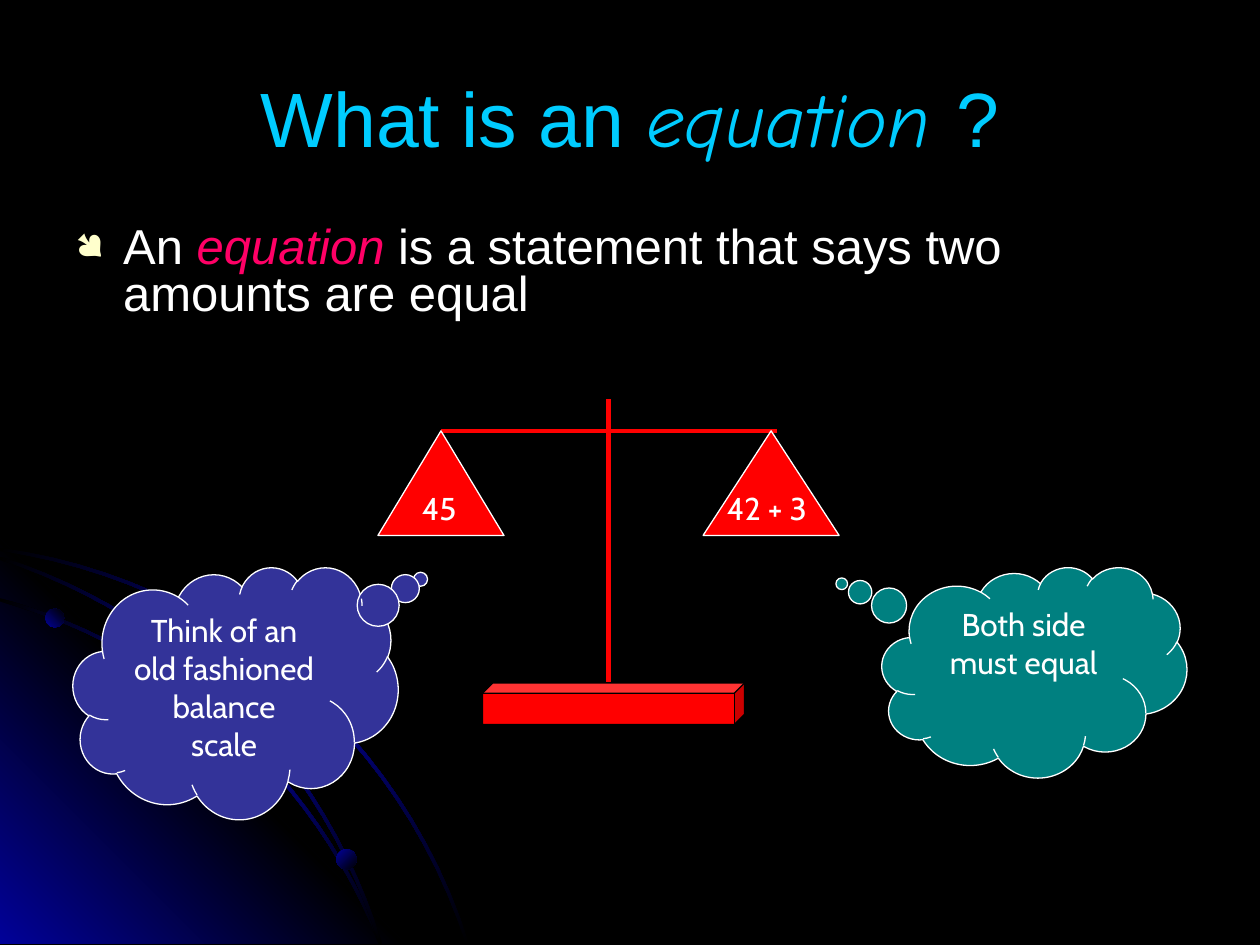
import math

from lxml import etree
from pptx import Presentation
from pptx import util as u
from pptx.dml.color import RGBColor
from pptx.enum import shapes, text
from pptx.oxml import parse_xml
from pptx.oxml.ns import nsdecls, qn

COLORS = {"black": "000000", "glow": "010199", "title": "00CCFF", "white": "FFFFFF",
          "accent": "FF0066", "bullet": "FFFFCC", "scale": "FF0000",
          "think": "333399", "equal": "008080"}


def paint(shape, fill, line=None, angle=0):
    """Fill with a colour name, or with evenly spaced gradient stops if given a list."""
    shape.shadow.inherit = False
    if isinstance(fill, str):
        shape.fill.solid()
        shape.fill.fore_color.rgb = RGBColor.from_string(COLORS[fill])
    else:
        stops = "".join(
            f'<a:gs pos="{100000 * i // (len(fill) - 1)}"><a:srgbClr val="{COLORS[name]}"/></a:gs>'
            for i, name in enumerate(fill))
        gradient = parse_xml(f'<a:gradFill {nsdecls("a")} rotWithShape="1"><a:gsLst>{stops}</a:gsLst>'
                             f'<a:lin ang="{angle * 60000}" scaled="1"/></a:gradFill>')
        shape._element.spPr.insert(2, gradient)  # after position and geometry
    if line:
        shape.line.color.rgb = RGBColor.from_string(COLORS[line])
        shape.line.width = u.Pt(0.75)
    else:
        shape.line.fill.background()


def write(paragraph, runs, size):
    """Add runs given as (words, font, colour name, italic)."""
    for words, font, color, italic in runs:
        run = paragraph.add_run()
        run.text = words
        run.font.name, run.font.size, run.font.italic = font, u.Pt(size), italic
        run.font.color.rgb = RGBColor.from_string(COLORS[color])


prs = Presentation()
prs.slide_width, prs.slide_height = u.Inches(10), u.Inches(7.5)
slide = prs.slides.add_slide(prs.slide_layouts[6])
slide.background.fill.solid()
slide.background.fill.fore_color.rgb = RGBColor.from_string(COLORS["black"])
canvas = slide.shapes

# Glowing corner: a right triangle in the bottom left
bottom = 7.49
corner = canvas.build_freeform(u.Inches(3.22), u.Inches(bottom))
corner.add_line_segments([(0, u.Inches(bottom)), (0, u.Inches(4.27))])
paint(corner.convert_to_shape(), ["glow", "black", "glow"], angle=315)

# Orbits: thin circular bands from the left edge down to the bottom edge
band_width, steps = 0.025, 24
for start_y, end_x, radius in [(4.36, 3.71, 4.56), (4.76, 3.02, 4.56), (4.43, 3.02, 4.66)]:
    drop = bottom - start_y
    chord = math.hypot(end_x, drop)
    to_center = math.sqrt(radius ** 2 - (chord / 2) ** 2)
    center_x = end_x / 2 - to_center * drop / chord
    center_y = (start_y + bottom) / 2 + to_center * end_x / chord
    first = math.atan2(start_y - center_y, -center_x)
    last = math.atan2(bottom - center_y, end_x - center_x)
    angles = [first + (last - first) * i / steps for i in range(steps + 1)]
    outline = [(u.Inches(center_x + edge * math.cos(a)), u.Inches(center_y + edge * math.sin(a)))
               for edge, sweep in [(radius + band_width / 2, angles),
                                   (radius - band_width / 2, angles[::-1])]
               for a in sweep]
    orbit = canvas.build_freeform(*outline[0])
    orbit.add_line_segments(outline[1:])
    paint(orbit.convert_to_shape(), ["black", "glow", "black"], angle=45)

for left, top, diameter, angle in [(0.36, 4.83, 0.15, 315), (2.67, 6.74, 0.16, 45)]:
    planet = canvas.add_shape(shapes.MSO_SHAPE.OVAL, u.Inches(left), u.Inches(top),
                              u.Inches(diameter), u.Inches(diameter))
    paint(planet, ["glow", "black"], angle=angle)

# Title and definition
title = canvas.add_textbox(u.Inches(0.5), u.Inches(0.3), u.Inches(9), u.Inches(1.25)).text_frame
title.word_wrap = True
title.vertical_anchor = text.MSO_ANCHOR.MIDDLE
title.paragraphs[0].alignment = text.PP_ALIGN.CENTER
write(title.paragraphs[0], [("What is an ", "Arial", "title", False),
                            ("equation ", "Comic Neue", "title", True),
                            ("?", "Arial", "title", False)], 44)

body = canvas.add_textbox(u.Inches(0.5), u.Inches(1.75), u.Inches(9), u.Inches(0.92)).text_frame
body.word_wrap = True
definition = body.paragraphs[0]
definition.line_spacing = 0.8
write(definition, [("An ", "Arial", "white", False),
                   ("equation", "Arial", "accent", True),
                   (" is a statement that says two amounts are equal", "Arial", "white", False)], 28)
properties = definition._p.get_or_add_pPr()
properties.set("marL", str(u.Inches(0.38)))
properties.set("indent", str(u.Inches(-0.38)))
bullet_color = etree.SubElement(properties, qn("a:buClr"))
etree.SubElement(bullet_color, qn("a:srgbClr"), val=COLORS["bullet"])
etree.SubElement(properties, qn("a:buSzPct"), val="75000")
etree.SubElement(properties, qn("a:buFont"), typeface="Wingdings", charset="2")
etree.SubElement(properties, qn("a:buChar"), char="●")

# Balance scale: post and beam, pans, base, weights
post_x, beam_y = 4.83, 3.42
for ends in [(post_x, 3.17, post_x, 5.5), (3.5, beam_y, 6.17, beam_y)]:
    bar = canvas.add_connector(shapes.MSO_CONNECTOR.STRAIGHT, *map(u.Inches, ends))
    bar.line.color.rgb = RGBColor.from_string(COLORS["scale"])
    bar.line.width = u.Pt(2.5)
    etree.SubElement(bar._element.spPr, qn("a:effectLst"))

for left, width in [(3, 1), (5.58, 1.08)]:
    pan = canvas.add_shape(shapes.MSO_SHAPE.FLOWCHART_EXTRACT, u.Inches(left), u.Inches(beam_y),
                           u.Inches(width), u.Inches(0.83))
    paint(pan, "scale", "white")

base = canvas.add_shape(shapes.MSO_SHAPE.CUBE, u.Inches(3.83), u.Inches(5.42),
                        u.Inches(2.08), u.Inches(0.33))
base.adjustments[0] = 0.25
paint(base, "scale", "black")

for weight, left, width in [("45", 3.25, 0.5), ("42 + 3", 5.67, 1)]:
    label = canvas.add_textbox(u.Inches(left), u.Inches(3.83), u.Inches(width), u.Inches(0.4))
    label.text_frame.word_wrap = True
    write(label.text_frame.paragraphs[0], [(weight, "Cabin", "white", False)], 18)

# Thought clouds
for left, width, height, tail, color, lines in [
        (0.58, 2.58, 2, (0.569, -0.451), "think", ["Think of an old fashioned balance", "scale"]),
        (7, 2.42, 1.67, (-0.632, -0.42), "equal", ["Both side must equal"])]:
    cloud = canvas.add_shape(shapes.MSO_SHAPE.CLOUD_CALLOUT, u.Inches(left), u.Inches(4.5),
                             u.Inches(width), u.Inches(height))
    cloud.adjustments[0], cloud.adjustments[1] = tail
    paint(cloud, color, "white")
    thought = cloud.text_frame
    thought.word_wrap = True
    thought.vertical_anchor = text.MSO_ANCHOR.TOP
    for i, line in enumerate(lines):
        paragraph = thought.add_paragraph() if i else thought.paragraphs[0]
        paragraph.alignment = text.PP_ALIGN.CENTER
        write(paragraph, [(line, "Cabin", "white", False)], 18)

prs.save("out.pptx")
